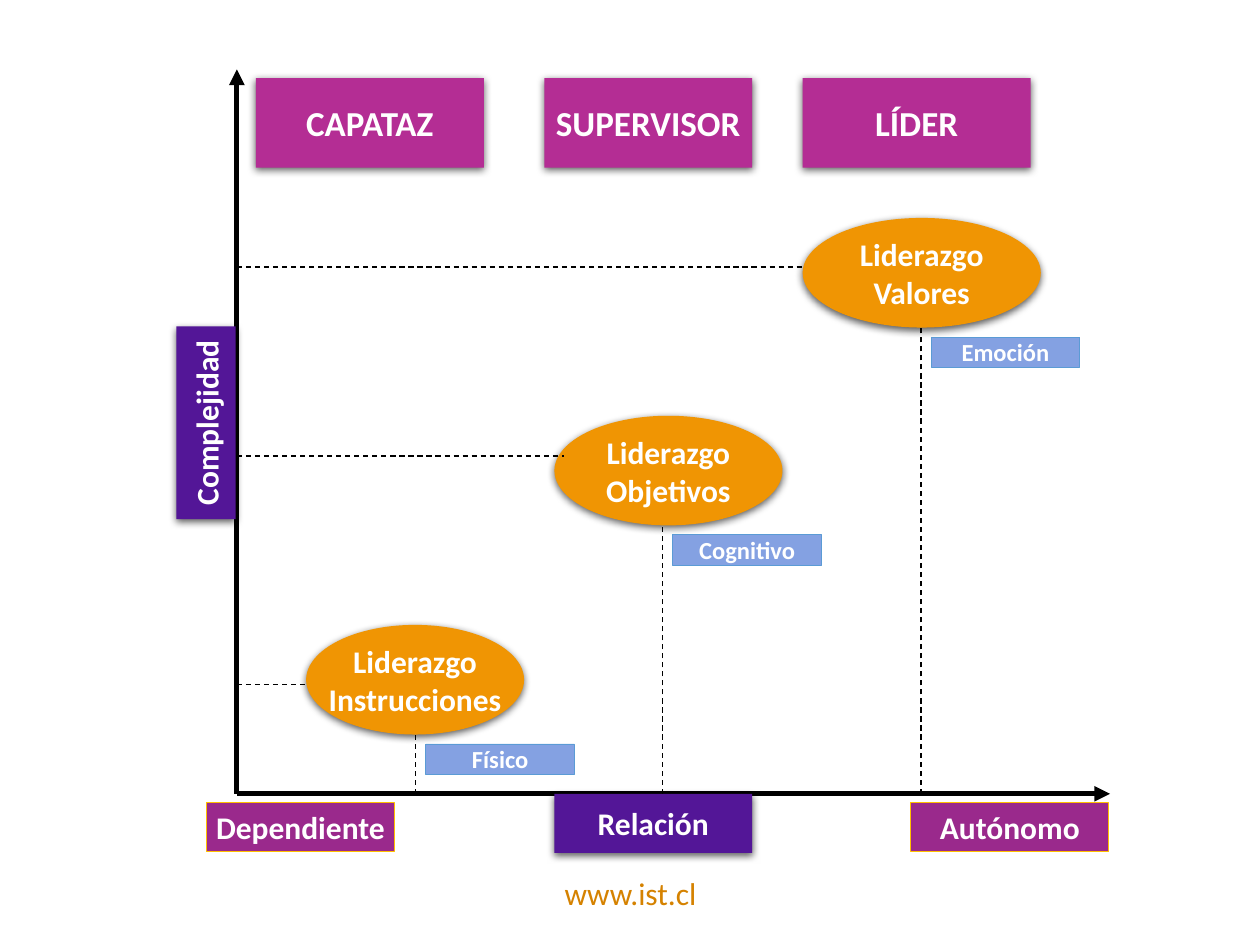
import pptx
import pptx.util
import pptx.oxml
import pptx.dml.color
import pptx.enum.dml
import pptx.enum.shapes
import pptx.enum.text

RGB = pptx.dml.color.RGBColor
KIND = pptx.enum.shapes.MSO_SHAPE
BLACK = RGB(0x00, 0x00, 0x00)
WHITE = RGB(0xFF, 0xFF, 0xFF)
PINK = RGB(0xB4, 0x2D, 0x94)
PLUM = RGB(0x9A, 0x29, 0x8C)
VIOLET = RGB(0x53, 0x16, 0x97)
ORANGE = RGB(0xF0, 0x95, 0x03)
BLUE = RGB(0x84, 0xA1, 0xE2)
EDGE = RGB(0x5B, 0x9B, 0xD5)
GOLD = RGB(0xFF, 0xC0, 0x00)
AMBER = RGB(0xD5, 0x82, 0x00)

# Grid of 100 columns and 75 rows
WIDE, HIGH = pptx.util.Inches(10), pptx.util.Inches(7.5)
COL, ROW = WIDE / 100, HIGH / 75
LEFT, BASE = 18.8, 63  # where the axes cross

NS = 'xmlns:a="http://schemas.openxmlformats.org/drawingml/2006/main"'
SHADE = (f'<a:effectLst {NS}><a:outerShdw blurRad="57150" dist="19050" '
         'dir="5400000" algn="ctr" rotWithShape="0"><a:srgbClr val="000000">'
         '<a:alpha val="63000"/></a:srgbClr></a:outerShdw></a:effectLst>')
PLAIN = f'<a:effectLst {NS}/>'
HEAD = f'<a:tailEnd {NS} type="triangle"/>'

# Title with left and width; oval with left, top, width;
# guide height, guide end, drop column; tag
STAGES = [
    ("CAPATAZ", 20.3, 18.1, "Liderazgo\nInstrucciones", 24.3, 49.6, 17.3,
     54.3, 24.3, 33, "Físico"),
    ("SUPERVISOR", 43.2, 16.5, "Liderazgo\nObjetivos", 44, 33, 18.1,
     36.2, 44.8, 52.6, "Cognitivo"),
    ("LÍDER", 63.7, 18.1, "Liderazgo\nValores", 63.7, 17.3, 18.9,
     21.2, 63.7, 73.1, "Emoción"),
]


def place(x, y, w, h):
    return [round(n) for n in (x * COL, y * ROW, w * COL, h * ROW)]


def write(shape, text, size, color=WHITE, bold=True):
    frame = shape.text_frame
    frame.text = text
    frame.word_wrap = False
    for para in frame.paragraphs:
        para.alignment = pptx.enum.text.PP_ALIGN.CENTER
        for run in para.runs:
            run.font.name = "Calibri"
            run.font.size = pptx.util.Pt(size)
            run.font.bold = bold
            run.font.color.rgb = color


def block(slide, text, area, fill, size=18, edge=None, kind=KIND.RECTANGLE):
    """Filled shape: outlined when edge is given, otherwise shadowed."""
    shape = slide.shapes.add_shape(kind, *place(*area))
    shape.shadow.inherit = False
    shape.fill.solid()
    shape.fill.fore_color.rgb = fill
    if edge is not None:
        shape.line.color.rgb = edge
        shape.line.width = pptx.util.Pt(0.5)
    else:
        shape.line.fill.background()
        props = shape.element.spPr
        props.remove(props[-1])
        props.append(pptx.oxml.parse_xml(SHADE))
    shape.text_frame.vertical_anchor = pptx.enum.text.MSO_ANCHOR.MIDDLE
    write(shape, text, size)
    return shape


def line(slide, x1, y1, x2, y2, arrow=False):
    """Thick axis with an arrowhead, or thin dashed guide."""
    link = slide.shapes.add_connector(
        pptx.enum.shapes.MSO_CONNECTOR.STRAIGHT, *place(x1, y1, x2, y2))
    link.line.color.rgb = BLACK
    link.line.width = pptx.util.Pt(3 if arrow else 0.75)
    if arrow:
        link.line._get_or_add_ln().append(pptx.oxml.parse_xml(HEAD))
    else:
        link.line.dash_style = pptx.enum.dml.MSO_LINE.DASH
    link.element.spPr.append(pptx.oxml.parse_xml(PLAIN))


def axes(slide):
    line(slide, LEFT, BASE, LEFT, 5.5, arrow=True)
    line(slide, LEFT, BASE, 88.1, BASE, arrow=True)
    side = block(slide, "Complejidad", (8.7, 31.2, 15.3, 4.7), VIOLET)
    side.rotation = 270
    for text, x, w in (("Dependiente", 16.4, 14.9), ("Autónomo", 72.3, 15.7)):
        block(slide, text, (x, 63.7, w, 3.9), PLUM, edge=GOLD)
    block(slide, "Relación", (44, BASE, 15.7, 4.7), VIOLET)


def stage(slide, title, tx, tw, text, x, y, w, level, end, drop, tag):
    deep = 8.7
    foot = y + deep
    block(slide, title, (tx, 6.2, tw, 7.1), PINK, size=20)
    block(slide, text, (x, y, w, deep), ORANGE, kind=KIND.OVAL)
    block(slide, tag, (drop + 0.8, foot + 0.75, 11.8, 2.4), BLUE,
          size=14, edge=EDGE)
    line(slide, LEFT, level, end, level)
    line(slide, drop, BASE, drop, foot)


def main():
    deck = pptx.Presentation()
    deck.slide_width, deck.slide_height = WIDE, HIGH
    slide = deck.slides.add_slide(deck.slide_layouts[6])

    # Web address at the foot
    site = slide.shapes.add_textbox(*place(35.9, 68.9, 28.3, 4))
    write(site, "www.ist.cl", 18, AMBER, bold=False)
    site.text_frame.word_wrap = True

    # Axes and their labels, then the three stages
    axes(slide)
    for item in STAGES:
        stage(slide, *item)
    deck.save("out.pptx")


if __name__ == "__main__":
    main()
